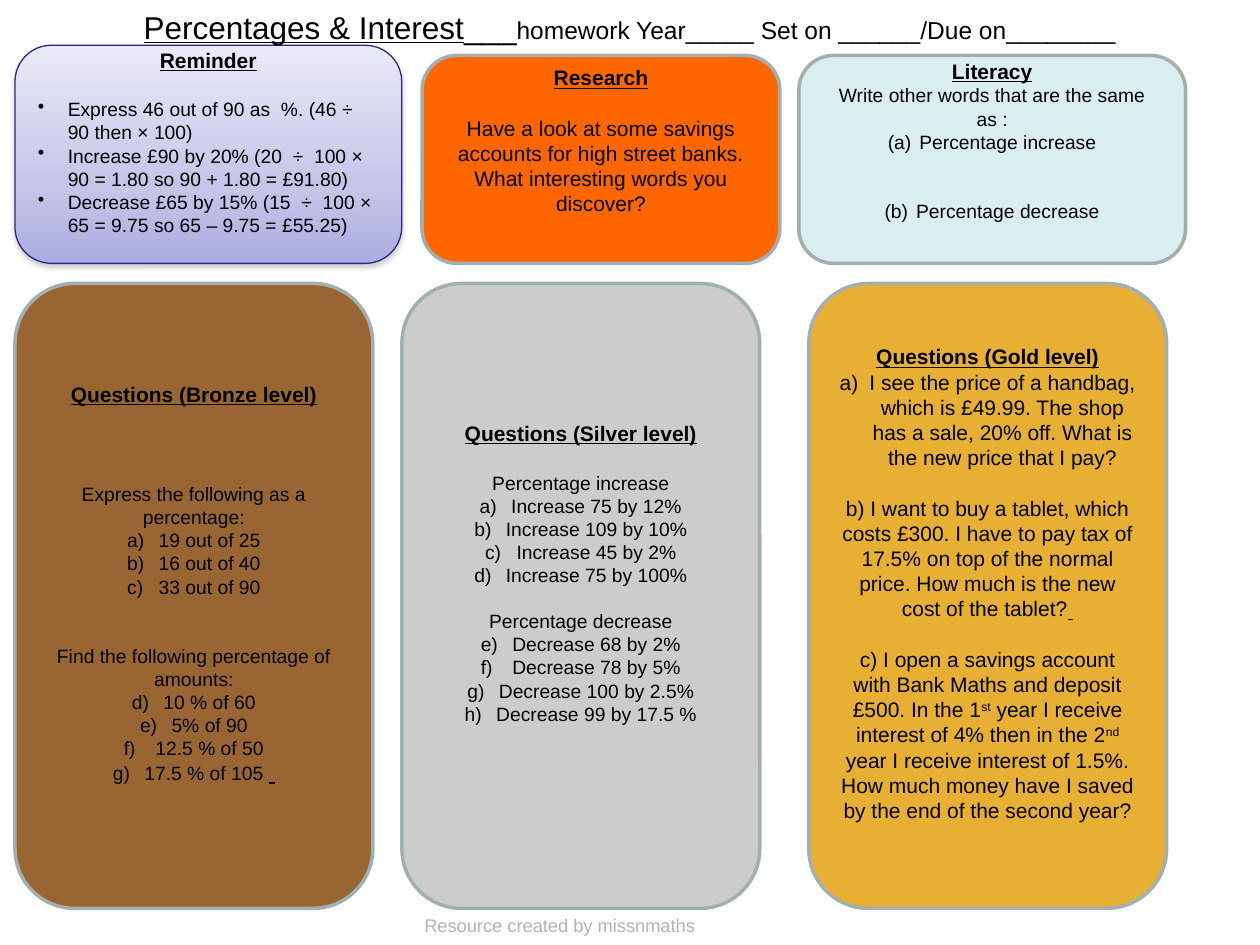
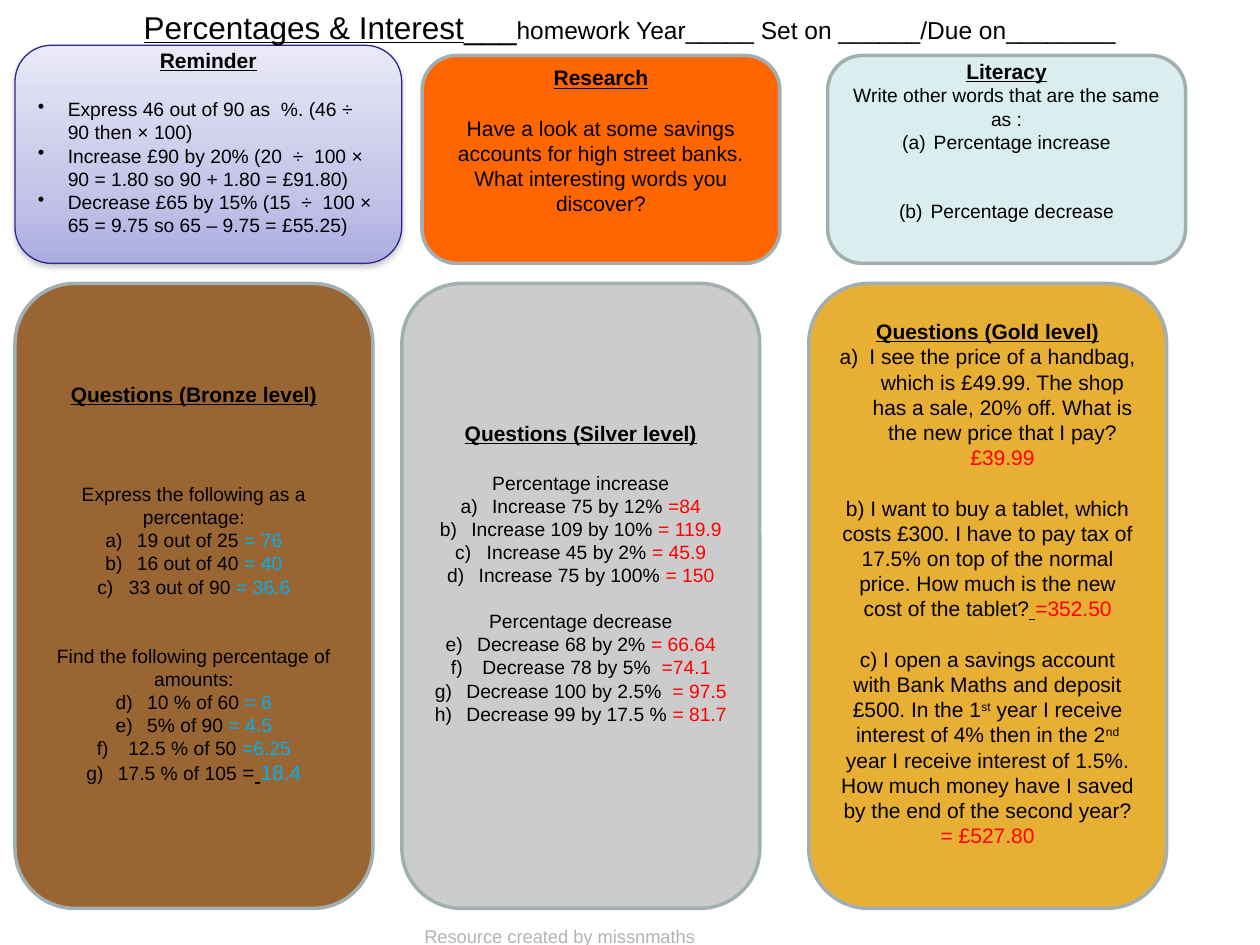
from copy import deepcopy
from dataclasses import dataclass

from lxml.etree import SubElement
from pptx import Presentation
from pptx.dml.color import RGBColor
from pptx.enum.shapes import MSO_SHAPE
from pptx.enum.text import MSO_ANCHOR, MSO_AUTO_SIZE, PP_ALIGN
from pptx.oxml.ns import qn
from pptx.util import Pt

BLACK = RGBColor(0x00, 0x00, 0x00)
FOOTER_GREY = RGBColor(0xB3, 0xB3, 0xB3)
CARD_EDGE = RGBColor(0xA1, 0xAF, 0xB1)
REMINDER_EDGE = RGBColor(0x29, 0x29, 0x89)
REMINDER_STOPS = [
    (0, RGBColor(0xE9, 0xE9, 0xF7)),
    (0.65, RGBColor(0xC5, 0xC5, 0xE9)),
    (1, RGBColor(0xAC, 0xAC, 0xE1)),
]
ORANGE = RGBColor(0xFF, 0x66, 0x00)
PALE_BLUE = RGBColor(0xDA, 0xED, 0xEF)
BRONZE = RGBColor(0x99, 0x66, 0x33)
SILVER = RGBColor(0xCC, 0xCC, 0xCC)
GOLD = RGBColor(0xE8, 0xAF, 0x35)
ANSWER_BLUE = RGBColor(0x00, 0xB0, 0xF0)
ANSWER_RED = RGBColor(0xFF, 0x00, 0x00)

SLIDE_WIDTH, SLIDE_HEIGHT = 720, 540
LEADING = 1.2
HEADING_LINE = 12 * LEADING
BODY_LINE = 11 * LEADING

UNDERLINED = {"underline": True}
HEADING = {"bold": True, "underline": True}
RAISED = {"baseline": 30}
BULLET = ("a:buChar", {"char": "•"})

BRONZE_FRACTIONS = [
    ("19 out of 25", " = 76"),
    ("16 out of 40", " = 40"),
    ("33 out of 90", " = 36.6"),
]
BRONZE_AMOUNTS = [
    ("10 % of 60", " = 6"),
    ("5% of 90", " = 4.5"),
    ("12.5 % of 50", " =6.25"),
]
SILVER_INCREASES = [
    ("Increase 75 by 12%", " =84"),
    ("Increase 109 by 10%", " = 119.9"),
    ("Increase 45 by 2%", " = 45.9"),
    ("Increase 75 by 100%", " = 150"),
]
SILVER_DECREASES = [
    ("Decrease 68 by 2%", " = 66.64"),
    ("Decrease 78 by 5%", "  =74.1"),
    ("Decrease 100 by 2.5%", "  = 97.5"),
    ("Decrease 99 by 17.5 %", " = 81.7"),
]


@dataclass
class Line:
    """One paragraph: its (text, format) runs, gap above and list marker."""
    runs: list
    size: float = 11
    gap: float = 0
    marker: tuple = None
    indent: float = 0
    align: PP_ALIGN = PP_ALIGN.CENTER


def plain(text, **layout):
    return Line([(text, {})], **layout)


def heading(text):
    return Line([(text, HEADING)], size=12)


def lettered(start, scheme="alphaLcParenR"):
    return "a:buAutoNum", {"type": scheme, "startAt": str(start)}


def questions(items, start, answer_colour, solved):
    lines = []
    for question, answer in items:
        runs = [(question, {})]
        if solved:
            runs.append((answer, {"color": answer_colour}))
        lines.append(Line(runs, marker=lettered(start), indent=18))
    return lines


class Worksheet:
    def __init__(self):
        self.deck = Presentation()
        self.deck.slide_width = Pt(SLIDE_WIDTH)
        self.deck.slide_height = Pt(SLIDE_HEIGHT)
        self.slide = None

    def new_slide(self):
        self.slide = self.deck.slides.add_slide(self.deck.slide_layouts[5])

    def write_runs(self, paragraph, runs, size):
        for text, changes in runs:
            look = {"name": "Arial", "size": size, "bold": False,
                    "underline": False, "color": BLACK} | changes
            run = paragraph.add_run()
            run.text = text
            run.font.color.rgb = look.pop("color")
            look["size"] = Pt(look["size"])
            raised = look.pop("baseline", 0)
            if raised:
                run.font._element.set("baseline", str(raised * 1000))
            for attribute, value in look.items():
                setattr(run.font, attribute, value)

    def write_line(self, paragraph, line):
        properties = paragraph._p.get_or_add_pPr()
        if line.marker:
            tag, values = line.marker
            properties.set("marL", str(Pt(line.indent)))
            properties.set("indent", str(-Pt(line.indent)))
            SubElement(properties, qn(tag), values)
        layout = {"alignment": line.align, "space_before": Pt(line.gap),
                  "line_spacing": Pt(line.size * LEADING)}
        for attribute, value in layout.items():
            setattr(paragraph, attribute, value)
        self.write_runs(paragraph, line.runs, line.size)

    def title(self):
        title = self.slide.shapes.title
        place = {"left": 0, "top": Pt(0.7), "width": Pt(SLIDE_WIDTH), "height": Pt(29)}
        for attribute, value in place.items():
            setattr(title, attribute, value)
        frame = title.text_frame
        frame.word_wrap = True
        frame.auto_size = MSO_AUTO_SIZE.NONE
        frame.vertical_anchor = MSO_ANCHOR.TOP
        paragraph = frame.paragraphs[0]
        paragraph.alignment = PP_ALIGN.CENTER
        self.write_runs(paragraph, [
            ("Percentages & Interest", UNDERLINED),
            ("___", {}),
            ("homework Year_____ Set on ______/Due on________", {"size": 14}),
        ], 18)
        # The title overlaps the Reminder card and lies on top of it.
        self.slide.shapes._spTree.append(title._element)

    def card(self, place, colour, lines, room_below):
        """Rounded card; room_below lifts the centred text off the bottom."""
        card = self.slide.shapes.add_shape(
            MSO_SHAPE.ROUNDED_RECTANGLE, *(Pt(length) for length in place))
        card.shadow.inherit = False
        card.line.color.rgb = CARD_EDGE
        card.line.width = Pt(2)
        card.fill.solid()
        card.fill.fore_color.rgb = colour
        frame = card.text_frame
        frame.word_wrap = True
        frame.vertical_anchor = MSO_ANCHOR.MIDDLE
        frame.margin_bottom = Pt(3.6 + room_below)
        for number, line in enumerate(lines):
            paragraph = frame.add_paragraph() if number else frame.paragraphs[0]
            self.write_line(paragraph, line)
        return card

    def shade(self, card):
        """Give a card the gradient, thin edge and soft shadow."""
        card.line.color.rgb = REMINDER_EDGE
        card.line.width = Pt(0.75)
        card.fill.gradient()
        card.fill.gradient_angle = 270
        properties = card._element.spPr
        stop_list = properties.find(".//" + qn("a:gsLst"))
        stop_list.insert(1, deepcopy(stop_list[0]))
        for stop, (position, colour) in zip(card.fill.gradient_stops, REMINDER_STOPS):
            stop.position = position
            stop.color.rgb = colour
        shadow = SubElement(properties.find(qn("a:effectLst")), qn("a:outerShdw"), {
            "blurRad": str(Pt(3.1)), "dist": str(Pt(1.6)),
            "dir": "5400000", "rotWithShape": "0"})
        tint = SubElement(shadow, qn("a:srgbClr"), {"val": "808080"})
        SubElement(tint, qn("a:alpha"), {"val": "38000"})

    def footer(self, top):
        footer = self.slide.shapes.add_textbox(
            Pt(235.4), Pt(top), Pt(266.4), Pt(SLIDE_HEIGHT - top))
        footer.text_frame.word_wrap = True
        self.write_runs(footer.text_frame.paragraphs[0],
                        [("Resource created by missnmaths", {"color": FOOTER_GREY})], 10.5)


def reminder_lines():
    examples = [
        "Express 46 out of 90 as  %. (46 ÷ 90 then × 100)",
        "Increase £90 by 20% (20  ÷  100 × 90 = 1.80 so 90 + 1.80 = £91.80)",
        "Decrease £65 by 15% (15  ÷  100 × 65 = 9.75 so 65 – 9.75 = £55.25)",
    ]
    return [heading("Reminder")] + [
        plain(example, gap=0 if number else HEADING_LINE, marker=BULLET,
              indent=17, align=PP_ALIGN.LEFT)
        for number, example in enumerate(examples)]


def research_lines():
    return [heading("Research"),
            plain("Have a look at some savings accounts for high street banks. "
                  "What interesting words you discover?", size=12, gap=HEADING_LINE)]


def literacy_lines():
    return [heading("Literacy"),
            plain("Write other words that are the same as :"),
            plain("Percentage increase", indent=18,
                  marker=lettered(1, "alphaLcParenBoth")),
            plain("Percentage decrease", indent=18, gap=2 * BODY_LINE,
                  marker=lettered(2, "alphaLcParenBoth"))]


def bronze_lines(solved):
    last = [("17.5 % of 105 ", {"size": 11})]
    if solved:
        last.append(("=", {}))
    last.append((" ", HEADING))
    if solved:
        last.append(("18.4", {"color": ANSWER_BLUE}))
    return [heading("Questions (Bronze level)"),
            plain("Express the following as a percentage:", gap=3 * HEADING_LINE),
            *questions(BRONZE_FRACTIONS, 1, ANSWER_BLUE, solved),
            plain("Find the following percentage of amounts:", gap=2 * BODY_LINE),
            *questions(BRONZE_AMOUNTS, 4, ANSWER_BLUE, solved),
            Line(last, size=12, marker=lettered(4), indent=18)]


def silver_lines(solved):
    return [heading("Questions (Silver level)"),
            plain("Percentage increase", gap=HEADING_LINE),
            *questions(SILVER_INCREASES, 1, ANSWER_RED, solved),
            plain("Percentage decrease", gap=BODY_LINE),
            *questions(SILVER_DECREASES, 5, ANSWER_RED, solved)]


def gold_lines(solved):
    handbag = [("I see the price of a handbag, which is £49.99. The shop has a sale, "
                "20% off. What is the new price that I pay?", {})]
    tablet = [("b) I want to buy a tablet, which costs £300. I have to pay tax of 17.5% "
               "on top of the normal price. How much is the new cost of the tablet?", {}),
              (" ", HEADING)]
    savings = [("c) I open a savings account with Bank Maths and deposit £500. In the 1", {}),
               ("st", RAISED),
               (" year I receive interest of 4% then in the 2", {}),
               ("nd", RAISED),
               (" year I receive interest of 1.5%. How much money have I saved "
                "by the end of the second year?", {})]
    if solved:
        answers = [" £39.99", "=352.50", " = £527.80"]
        for runs, answer in zip((handbag, tablet, savings), answers):
            runs.append((answer, {"color": ANSWER_RED}))
    return [heading("Questions (Gold level)"),
            Line(handbag, size=12, marker=lettered(1), indent=17),
            Line(tablet, size=12, gap=HEADING_LINE),
            Line(savings, size=12, gap=HEADING_LINE)]


def main():
    sheet = Worksheet()
    top_row = (31.7, 118.8)
    level_size = (162, 204.5, 357.1)
    for solved, literacy_left, footer_top in ((False, 456.5, 519), (True, 473, 525)):
        sheet.new_slide()
        reminder = sheet.card((8.6, 25.9, 221, 124.6), PALE_BLUE,
                              reminder_lines(), HEADING_LINE)
        sheet.shade(reminder)
        sheet.card((241.2, top_row[0], 204.5, top_row[1]), ORANGE,
                   research_lines(), 18 * LEADING)
        sheet.card((literacy_left, top_row[0], 677.5 - literacy_left, top_row[1]),
                   PALE_BLUE, literacy_lines(), 18 * LEADING)
        levels = [(8.6, BRONZE, bronze_lines, HEADING_LINE),
                  (229.7, SILVER, silver_lines, 2 * BODY_LINE),
                  (462.2, GOLD, gold_lines, HEADING_LINE)]
        for left, colour, lines, room_below in levels:
            sheet.card((left, *level_size[:1], *level_size[1:]), colour,
                       lines(solved), room_below)
        sheet.title()
        sheet.footer(footer_top)
    sheet.deck.save("out.pptx")


if __name__ == "__main__":
    main()
